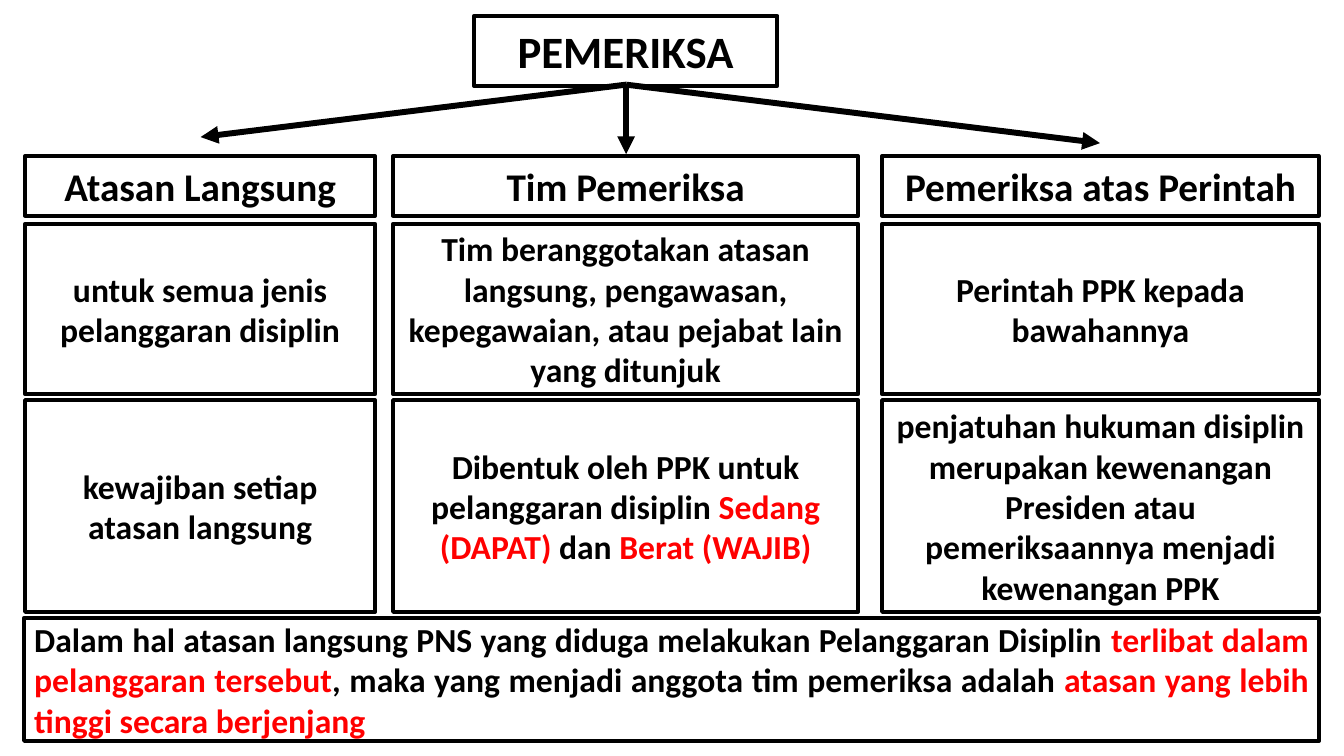
import pptx
import pptx.util
import pptx.dml.color
import pptx.enum.shapes
import pptx.enum.text
import pptx.oxml.ns
from lxml import etree

COLORS = {"ink": "000000", "accent": "FF0000"}
FONT = "Calibri"
Inches = pptx.util.Inches
Align = pptx.enum.text.PP_ALIGN


def color(name):
    return pptx.dml.color.RGBColor.from_string(COLORS[name])


def write_text(frame, text, size=24, align=Align.CENTER):
    """Write bold text; parts between asterisks take the accent colour."""
    frame.word_wrap = True
    frame.vertical_anchor = pptx.enum.text.MSO_ANCHOR.MIDDLE
    paragraph = frame.paragraphs[0]
    paragraph.alignment = align
    for index, part in enumerate(text.split("*")):
        if part:
            run = paragraph.add_run()
            run.text = part
            run.font.name = FONT
            run.font.size = pptx.util.Pt(size)
            run.font.bold = True
            run.font.color.rgb = color("accent" if index % 2 else "ink")


class Chart:
    """Draws outlined boxes and arrows on one slide."""

    def __init__(self, slide, box_line=3, arrow_line=4.25):
        self.slide = slide
        self.box_line = box_line
        self.arrow_line = arrow_line

    def box(self, left, top, width, height, text, **text_format):
        box = self.slide.shapes.add_shape(
            pptx.enum.shapes.MSO_SHAPE.RECTANGLE,
            Inches(left), Inches(top), Inches(width), Inches(height))
        box.shadow.inherit = False
        box.fill.background()
        box.line.color.rgb = color("ink")
        box.line.width = pptx.util.Pt(self.box_line)
        write_text(box.text_frame, text, **text_format)

    def arrow(self, start, end):
        arrow = self.slide.shapes.add_connector(
            pptx.enum.shapes.MSO_CONNECTOR.STRAIGHT,
            *(Inches(value) for value in start + end))
        arrow.line.color.rgb = color("ink")
        arrow.line.width = pptx.util.Pt(self.arrow_line)
        qn = pptx.oxml.ns.qn
        etree.SubElement(arrow.line._get_or_add_ln(), qn("a:tailEnd"), type="triangle")
        etree.SubElement(arrow._element.spPr, qn("a:effectLst"))


def main():
    deck = pptx.Presentation()
    deck.slide_width, deck.slide_height = Inches(13.33), Inches(7.5)
    chart = Chart(deck.slides.add_slide(deck.slide_layouts[6]))

    # Three columns: heading, description, authority
    columns = [(0.25, 3.47), (3.9, 4.61), (8.75, 4.33)]
    rows = [(1.55, 0.59, 28), (2.22, 1.69, 24), (3.97, 2.1, 24)]
    examiners = [
        ("Atasan Langsung",
         "untuk semua jenis pelanggaran disiplin",
         "kewajiban setiap atasan langsung"),
        ("Tim Pemeriksa",
         "Tim beranggotakan atasan langsung, pengawasan, kepegawaian, "
         "atau pejabat lain yang ditunjuk",
         "Dibentuk oleh PPK untuk pelanggaran disiplin *Sedang (DAPAT)* dan *Berat (WAJIB)*"),
        ("Pemeriksa atas Perintah",
         "Perintah PPK kepada bawahannya",
         "penjatuhan hukuman disiplin merupakan kewenangan Presiden atau "
         "pemeriksaannya menjadi kewenangan PPK"),
    ]
    for (left, width), texts in zip(columns, examiners):
        for (top, height, size), text in zip(rows, texts):
            chart.box(left, top, width, height, text, size=size)

    # Root box and its branches
    chart.box(4.7, 0.16, 3.01, 0.69, "PEMERIKSA", size=32)
    for branch_end in [(1.99, 1.36), (10.91, 1.42), (6.21, 1.53)]:
        chart.arrow((6.21, 0.84), branch_end)

    # Closing rule across the full width
    chart.box(
        0.24, 6.13, 12.84, 1.22,
        "Dalam hal atasan langsung PNS yang diduga melakukan Pelanggaran Disiplin "
        "*terlibat dalam pelanggaran tersebut*, maka yang menjadi anggota tim "
        "pemeriksa adalah *atasan yang lebih tinggi secara berjenjang*",
        align=Align.JUSTIFY)

    deck.save("out.pptx")


if __name__ == "__main__":
    main()
